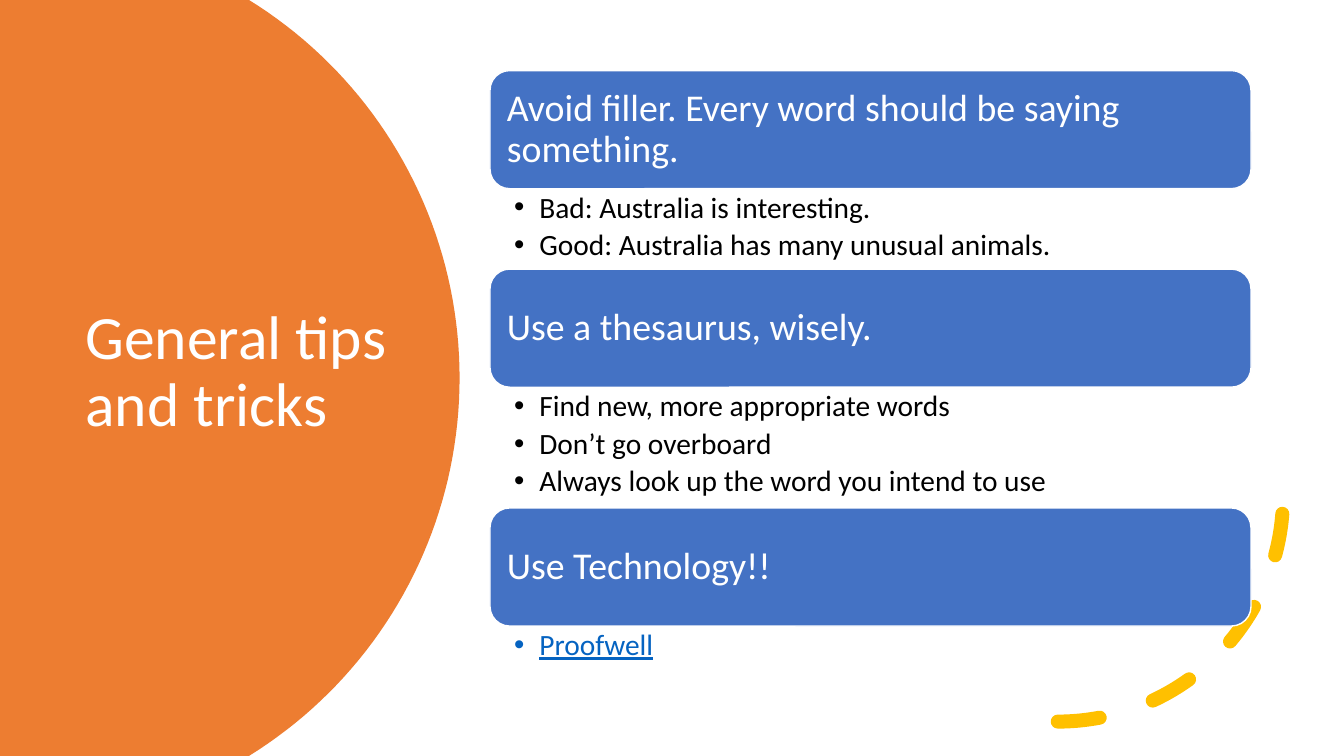
from math import asin, cos, sin

from lxml.etree import SubElement
from pptx import Presentation
from pptx.dml.color import RGBColor
from pptx.enum.dml import MSO_LINE as Dash
from pptx.enum.shapes import MSO_SHAPE as Kind
from pptx.enum.text import MSO_ANCHOR as Anchor, PP_ALIGN as Align
from pptx.oxml.ns import qn
from pptx.util import Pt

WHITE = RGBColor(0xFF, 0xFF, 0xFF)
BLACK = RGBColor(0, 0, 0)
ORANGE = RGBColor(0xED, 0x7D, 0x31)
BLUE = RGBColor(0x44, 0x72, 0xC4)
GOLD = RGBColor(0xFF, 0xC0, 0x00)
LINK = RGBColor(0x05, 0x63, 0xC1)

WIDE, HIGH = 960, 540
LEFT, TOP, SPAN, BAR = 350, 50.4, 543.6, 84.4

# heading, list height, list colour, underlined, list items
TIPS = [
    ("Avoid filler. Every word should be saying something.", 57.4, BLACK, False,
     ["Bad: Australia is interesting.",
      "Good: Australia has many unusual animals."]),
    ("Use a thesaurus, wisely.", 86.2, BLACK, False,
     ["Find new, more appropriate words",
      "Don’t go overboard",
      "Always look up the word you intend to use"]),
    ("Use Technology!!", 35.3, LINK, True, ["Proofwell"]),
]


class Page:
    font = "Calibri"
    lead = 0.9
    dent = Pt(18)

    def __init__(self, slide):
        self.shapes = slide.shapes

    def label(self, shape, lines, size, color, pad, anchor, bullet=False, under=False):
        """Fill a shape with paragraphs; pad is left, top, right, bottom."""
        frame = shape.text_frame
        left, top, right, bottom = map(Pt, pad)
        form = {"word_wrap": True, "vertical_anchor": anchor,
                "margin_left": left, "margin_top": top,
                "margin_right": right, "margin_bottom": bottom}
        for name, value in form.items():
            setattr(frame, name, value)
        look = {"name": self.font, "size": Pt(size), "underline": under}
        for num, line in enumerate(lines):
            para = frame.add_paragraph() if num else frame.paragraphs[0]
            para.alignment = Align.LEFT
            para.line_spacing = self.lead
            run = para.add_run()
            run.text = line
            for name, value in look.items():
                setattr(run.font, name, value)
            run.font.color.rgb = color
            if bullet:
                para.space_after = Pt(size * 0.2)
                props = para._p.get_or_add_pPr()
                props.set("marL", str(self.dent))
                props.set("indent", str(-self.dent))
                SubElement(props, qn("a:buFont")).set("typeface", "Arial")
                SubElement(props, qn("a:buChar")).set("char", "•")

    def text(self, box, *args, **more):
        self.label(self.shapes.add_textbox(*map(Pt, box)), *args, **more)

    def bar(self, box, head):
        shape = self.shapes.add_shape(Kind.ROUNDED_RECTANGLE, *map(Pt, box))
        shape.shadow.inherit = False
        shape.fill.solid()
        shape.fill.fore_color.rgb = BLUE
        shape.line.color.rgb = WHITE
        shape.line.width = Pt(1)
        self.label(shape, [head], 27, WHITE, [7.9] * 4, Anchor.MIDDLE)

    def disc(self, mid, rad, color, steps=80):
        """Draw the part of a circle right of the slide's left edge."""
        turn = asin(HIGH / 2 / rad)
        angles = [turn * (2 * step / steps - 1) for step in range(steps + 1)]
        rim = [(Pt(mid + rad * cos(a)), Pt(HIGH / 2 + rad * sin(a))) for a in angles]
        pen = self.shapes.build_freeform(0, 0)
        pen.add_line_segments(rim + [(0, Pt(HIGH))], close=True)
        shape = pen.convert_to_shape()
        shape.shadow.inherit = False
        shape.fill.solid()
        shape.fill.fore_color.rgb = color
        shape.line.fill.background()

    def arc(self, box, color, width):
        """Draw a dashed, round-capped quarter arc at the lower right."""
        shape = self.shapes.add_shape(Kind.ARC, *map(Pt, box))
        shape.shadow.inherit = False
        shape.fill.background()
        shape.line.color.rgb = color
        shape.line.width = Pt(width)
        shape.line.dash_style = Dash.DASH
        props = shape._element.spPr
        props.find(qn("a:xfrm")).set("flipV", "1")
        props.find(qn("a:ln")).set("cap", "rnd")


def main():
    deck = Presentation()
    deck.slide_width, deck.slide_height = Pt(WIDE), Pt(HIGH)
    page = Page(deck.slides.add_slide(deck.slide_layouts[6]))

    page.disc(10.8, 317.5, ORANGE)
    page.text((54, 90.7, 252, 351.4), ["General tips and tricks"], 44, WHITE,
              (7.2, 3.6, 7.2, 3.6), Anchor.MIDDLE)
    page.arc((594.7, 193.7, 321.8, 321.8), GOLD, 10)

    top = TOP
    for head, tall, color, under, items in TIPS:
        page.bar((LEFT, top, SPAN, BAR), head)
        top += BAR
        page.text((LEFT, top, SPAN, tall), items, 21, color,
                  (17.3, 2.9, 15.1, 2.9), Anchor.TOP, bullet=True, under=under)
        top += tall

    deck.save("out.pptx")


if __name__ == "__main__":
    main()
